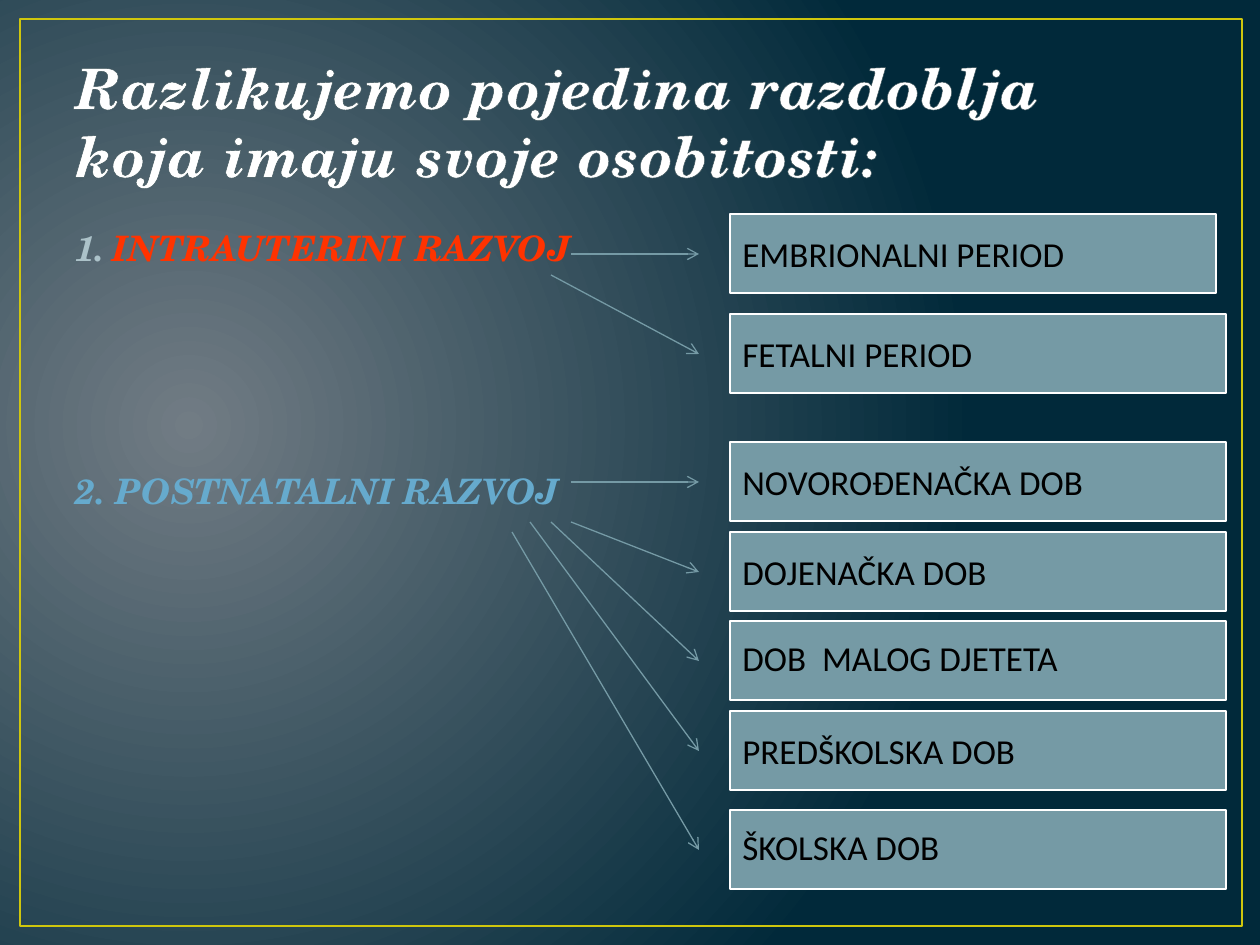
from lxml.etree import SubElement
from pptx import Presentation
from pptx.dml.color import RGBColor
from pptx.enum.shapes import MSO_CONNECTOR, MSO_SHAPE
from pptx.enum.text import MSO_ANCHOR, MSO_AUTO_SIZE, PP_ALIGN
from pptx.oxml import parse_xml
from pptx.oxml.ns import nsdecls, qn
from pptx.util import Emu, Pt

EMU_PER_PX = 914400 / 126
COLORS = {
    "glow": "717C84", "night": "01293A", "frame": "CFC60D", "white": "FFFFFF",
    "outline": "384F55", "number": "ACC2C9", "red": "FF3300", "blue": "66AACD",
    "steel": "759AA5", "black": "000000",
}
HEADING_FONT = {"name": "TeX Gyre Schola", "bold": True, "italic": True}
TITLE_FONT = {**HEADING_FONT, "size": Pt(32.4)}
LIST_FONT = {**HEADING_FONT, "size": Pt(20)}
BOX_FONT = {"name": "Calibri", "size": Pt(20)}

BOX_LEFT, BOX_WIDTH, BOX_HEIGHT = 730, 496, 79
ARROW_END = 699
# label, box top, arrow start, paragraph format
PERIODS = [
    ("EMBRIONALNI PERIOD", 214, (571, 254), {}),
    ("FETALNI PERIOD", 314, (551, 275), {}),
    ("NOVOROĐENAČKA DOB", 442, (571, 482), {}),
    ("DOJENAČKA DOB", 532, (571, 522), {}),
    ("DOB  MALOG DJETETA", 621, (551, 522), {"line_spacing": 0.9}),
    ("PREDŠKOLSKA DOB", 711, (530, 522), {}),
    ("ŠKOLSKA DOB", 810, (512, 532), {"line_spacing": 0.9, "space_before": Pt(4)}),
]


def px(*lengths):
    """Turn pixel lengths into EMU."""
    return [Emu(round(length * EMU_PER_PX)) for length in lengths]


def rgb(color):
    return RGBColor.from_string(COLORS[color])


def set_all(target, values):
    for name, value in values.items():
        setattr(target, name, value)


class SlideBuilder:
    def __init__(self, slide):
        self.slide = slide

    def background(self, center_color, edge_color):
        """Radial gradient with its centre left of the middle."""
        fill = self.slide.background.fill
        fill.gradient()
        for stop, color in zip(fill.gradient_stops, (center_color, edge_color)):
            stop.color.rgb = rgb(color)
        gradient = self.slide.element.find(".//" + qn("a:gradFill"))
        for position, stop in zip(("0", "100000"), gradient.iter(qn("a:gs"))):
            stop.set("pos", position)
        gradient.replace(gradient.find(qn("a:lin")), parse_xml(
            f'<a:path {nsdecls("a")} path="circle">'
            '<a:fillToRect l="15000" t="50000" r="85000" b="60000"/></a:path>'))

    def rectangle(self, box, line, width, fill=None):
        shape = self.slide.shapes.add_shape(MSO_SHAPE.RECTANGLE, *px(*box))
        shape.shadow.inherit = False
        if fill:
            shape.fill.solid()
            shape.fill.fore_color.rgb = rgb(fill)
        else:
            shape.fill.background()
        shape.line.color.rgb = rgb(line)
        shape.line.width = Pt(width)
        return shape

    def placeholder(self, index, box, anchor):
        shape = self.slide.placeholders[index]
        set_all(shape, dict(zip(("left", "top", "width", "height"), px(*box))))
        set_all(shape.text_frame, {"vertical_anchor": anchor, "word_wrap": True,
                                   "auto_size": MSO_AUTO_SIZE.NONE})
        return shape.text_frame

    def add_text(self, paragraph, text, font, color, **layout):
        run = paragraph.add_run()
        run.text = text
        set_all(run.font, font)
        run.font.color.rgb = rgb(color)
        set_all(paragraph, {"alignment": PP_ALIGN.LEFT, **layout})
        return run

    def title(self, text, box):
        frame = self.placeholder(0, box, MSO_ANCHOR.BOTTOM)
        run = self.add_text(frame.paragraphs[0], text, TITLE_FONT, "white")
        properties = run._r.get_or_add_rPr()
        properties.set("spc", "50")
        properties.insert(0, parse_xml(
            f'<a:ln {nsdecls("a")} w="13335"><a:solidFill>'
            f'<a:srgbClr val="{COLORS["outline"]}"/></a:solidFill></a:ln>'))

    def stages(self, items, box):
        """Fill the body; an item is text, colour, numbered or not, and layout."""
        frame = self.placeholder(1, box, MSO_ANCHOR.TOP)
        for number, (text, color, numbered, layout) in enumerate(items):
            paragraph = frame.add_paragraph() if number else frame.paragraphs[0]
            self.add_text(paragraph, text, LIST_FONT, color, **layout)
            properties = paragraph._p.get_or_add_pPr()
            indent = px(37)[0]
            properties.set("marL", str(indent))
            properties.set("indent", str(-indent))
            if numbered:
                bullet_color = SubElement(properties, qn("a:buClr"))
                SubElement(bullet_color, qn("a:srgbClr"), val=COLORS["number"])
                SubElement(properties, qn("a:buFont"), typeface=LIST_FONT["name"])
                SubElement(properties, qn("a:buAutoNum"), type="arabicPeriod")
            else:
                SubElement(properties, qn("a:buNone"))

    def period(self, text, box, layout):
        shape = self.rectangle(box, "white", 0.75, "steel")
        set_all(shape.text_frame, {"word_wrap": True,
                                   "vertical_anchor": MSO_ANCHOR.MIDDLE})
        self.add_text(shape.text_frame.paragraphs[0], text, BOX_FONT, "black", **layout)

    def arrow(self, start, end):
        connector = self.slide.shapes.add_connector(
            MSO_CONNECTOR.STRAIGHT, *px(*start, *end))
        connector.line.color.rgb = rgb("steel")
        connector.line.width = Pt(0.75)
        properties = connector.element.spPr
        SubElement(properties.find(qn("a:ln")), qn("a:tailEnd"), type="arrow")
        SubElement(properties, qn("a:effectLst"))


def main():
    presentation = Presentation()
    presentation.slide_width, presentation.slide_height = px(1260, 945)
    layout = presentation.slide_layouts.get_by_name("Title and Content")
    builder = SlideBuilder(presentation.slides.add_slide(layout))

    builder.background("glow", "night")
    builder.rectangle((20, 19, 1222, 907), "frame", 1.5)
    builder.title("Razlikujemo pojedina razdoblja koja imaju svoje osobitosti:",
                  (63, 38, 1134, 157))
    builder.stages([
        ("INTRAUTERINI RAZVOJ", "red", True, {}),
        ("2. POSTNATALNI RAZVOJ", "blue", False, {"space_before": Pt(115)}),
    ], (63, 220, 1134, 624))
    for number, (text, top, start, text_layout) in enumerate(PERIODS):
        width = BOX_WIDTH if number else BOX_WIDTH - 10
        builder.period(text, (BOX_LEFT, top, width, BOX_HEIGHT), text_layout)
        builder.arrow(start, (ARROW_END, top + 40))
    presentation.save("out.pptx")


if __name__ == "__main__":
    main()
